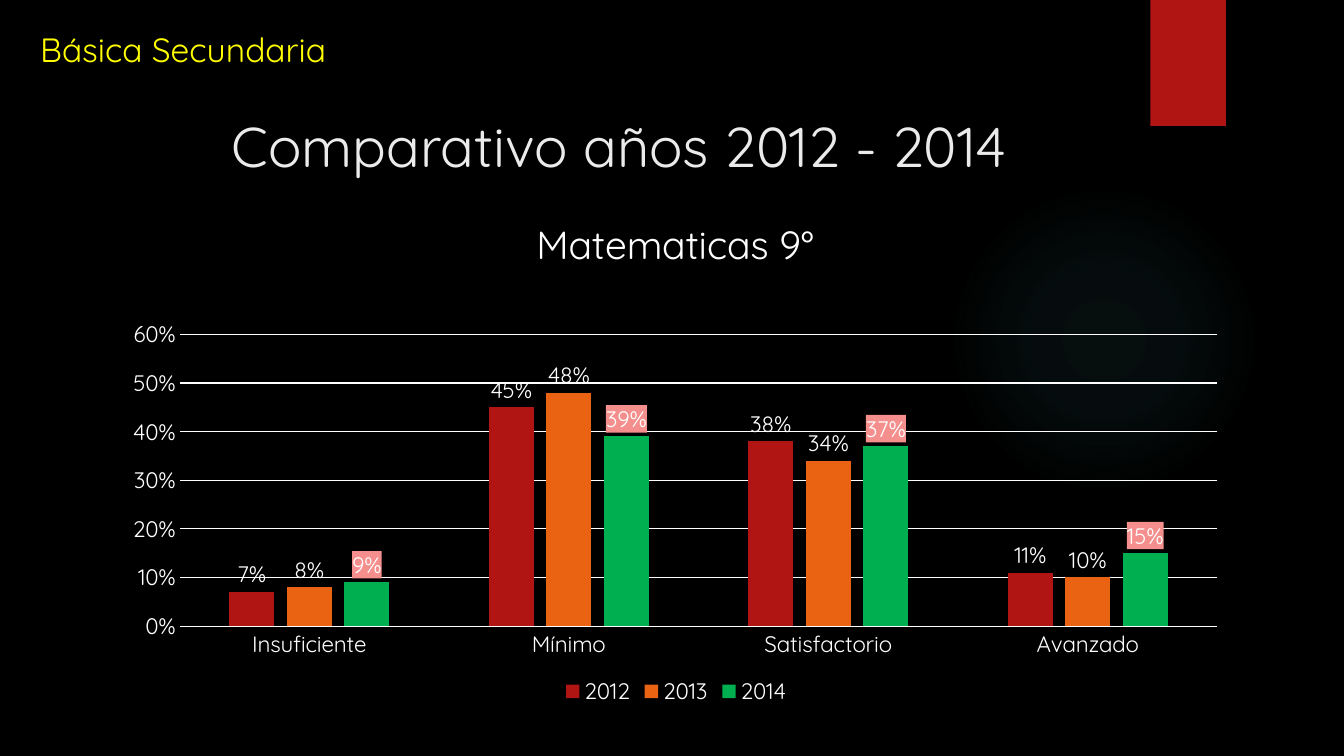
"""Build the slide comparing ninth-grade mathematics results from 2012 to 2014."""
from lxml import etree
from pptx import Presentation
from pptx.chart.data import CategoryChartData
from pptx.dml.color import RGBColor
from pptx.enum.chart import (XL_CHART_TYPE, XL_LABEL_POSITION,
                             XL_LEGEND_POSITION, XL_TICK_MARK)
from pptx.enum.shapes import MSO_SHAPE
from pptx.enum.text import MSO_ANCHOR
from pptx.oxml import parse_xml
from pptx.oxml.ns import nsdecls, qn
from pptx.util import Inches, Pt

COLUMNS = XL_CHART_TYPE.COLUMN_CLUSTERED
OUTSIDE = XL_LABEL_POSITION.OUTSIDE_END
BOTTOM = XL_LEGEND_POSITION.BOTTOM
NO_TICK = XL_TICK_MARK.NONE
MIDDLE = MSO_ANCHOR.MIDDLE

HEADINGS = [
    ("Comparativo años 2012 - 2014", (2.2, 1.01, 8.61, 0.85), "title"),
    ("Básica Secundaria", (0.3, 0.24, 3.23, 0.5), "section"),
]
CHART_TITLE = "Matematicas 9°"
LEVELS = ["Insuficiente", "Mínimo", "Satisfactorio", "Avanzado"]
RESULTS = {
    "2012": (0.07, 0.45, 0.38, 0.11),
    "2013": (0.08, 0.48, 0.34, 0.1),
    "2014": (0.09, 0.39, 0.37, 0.15),
}
HIGHLIGHTED_YEAR = "2014"
CHART_BOX = (1.11, 1.87, 11.19, 5.17)
TITLE_LAYOUT = {"xMode": "edge", "yMode": "edge", "x": 0.37, "y": 0.04}
PLOT_LAYOUT = {"layoutTarget": "inner", "xMode": "edge", "yMode": "edge",
               "x": 0.06, "y": 0.28, "w": 0.92, "h": 0.56}
GLOW_BOX = (9.41, 1.83, 3.08, 3.08)
GLOW_STOPS = [(0, 7), (36, 6), (69, 0)]
RIBBON_BOX = (11.41, 0, 0.75, 1.25)

THEME = {
    "font": "Quicksand",
    "background": "000000",
    "glow": "50B9C1",
    "ribbon": "B01513",
    "grid": "FFFFFF",
    "highlight": "F58F8D",
    "years": ("B01513", "EA6312", "00B050"),
    "title": (40, "EBEBEB"),
    "section": (24, "FFFF00"),
    "chart_title": (28, "FFFFFF"),
    "chart_text": (16, "FFFFFF"),
}


def apply(target, formats):
    for name, value in formats.items():
        setattr(target, name, value)


def style_font(font, role):
    size, color = THEME[role]
    apply(font, {"name": THEME["font"], "size": Pt(size), "bold": False})
    font.color.rgb = RGBColor.from_string(color)


def paint(fill, color):
    fill.solid()
    fill.fore_color.rgb = RGBColor.from_string(color)


def add_heading(slide, wording, box, role):
    heading = slide.shapes.add_textbox(*map(Inches, box))
    apply(heading.text_frame, {"word_wrap": True, "vertical_anchor": MIDDLE})
    paragraph = heading.text_frame.paragraphs[0]
    paragraph.text = wording
    style_font(paragraph.runs[0].font, role)


def add_decoration(slide, preset, box):
    decoration = slide.shapes.add_shape(preset, *map(Inches, box))
    decoration.shadow.inherit = False
    decoration.line.fill.background()
    paint(decoration.fill, THEME["ribbon"])
    return decoration


def add_glow(slide):
    glow = add_decoration(slide, MSO_SHAPE.OVAL, GLOW_BOX)
    stops = "".join(
        f'<a:gs pos="{place * 1000}"><a:srgbClr val="{THEME["glow"]}">'
        f'<a:alpha val="{alpha * 1000}"/></a:srgbClr></a:gs>'
        for place, alpha in GLOW_STOPS)
    gradient = parse_xml(
        f'<a:gradFill {nsdecls("a")}><a:gsLst>{stops}</a:gsLst><a:path path="circle">'
        '<a:fillToRect l="50000" t="50000" r="50000" b="50000"/></a:path></a:gradFill>')
    solid = glow.fill._xPr.find(qn("a:solidFill"))
    solid.getparent().replace(solid, gradient)


def place_manually(parent, position, settings):
    for old in parent.findall(qn("c:layout")):
        parent.remove(old)
    layout = etree.Element(qn("c:layout"))
    manual = etree.SubElement(layout, qn("c:manualLayout"))
    for name, value in settings.items():
        etree.SubElement(manual, qn(f"c:{name}")).set("val", str(value))
    parent.insert(position, layout)


def style_axes(chart):
    for axis in (chart.category_axis, chart.value_axis):
        apply(axis, {"major_tick_mark": NO_TICK, "minor_tick_mark": NO_TICK})
        style_font(axis.tick_labels.font, "chart_text")
    values = chart.value_axis
    apply(values, {"minimum_scale": 0, "maximum_scale": 0.6, "major_unit": 0.1,
                   "has_major_gridlines": True})
    apply(values.tick_labels, {"number_format": "0%", "number_format_is_linked": False})
    values.format.line.fill.background()
    for line in (values.major_gridlines.format.line, chart.category_axis.format.line):
        paint(line.fill, THEME["grid"])
        line.width = Pt(0.75)


def style_series(series, color):
    paint(series.format.fill, color)
    series.invert_if_negative = False
    labels = series.data_labels
    apply(labels, {"show_value": True, "number_format": "0%",
                   "number_format_is_linked": False, "position": OUTSIDE})
    style_font(labels.font, "chart_text")
    if series.name == HIGHLIGHTED_YEAR:
        labels._element.find(qn("c:numFmt")).addnext(parse_xml(
            f'<c:spPr {nsdecls("c", "a")}><a:solidFill>'
            f'<a:srgbClr val="{THEME["highlight"]}"/></a:solidFill></c:spPr>'))


def add_results_chart(slide):
    results = CategoryChartData(number_format="0%")
    results.categories = LEVELS
    for year, shares in RESULTS.items():
        results.add_series(year, shares)
    chart = slide.shapes.add_chart(COLUMNS, *map(Inches, CHART_BOX), results).chart
    style_font(chart.font, "chart_text")
    apply(chart, {"has_title": True, "has_legend": True})
    heading = chart.chart_title.text_frame.paragraphs[0]
    heading.text = CHART_TITLE
    style_font(heading.runs[0].font, "chart_title")
    apply(chart.legend, {"position": BOTTOM, "include_in_layout": False})
    style_font(chart.legend.font, "chart_text")
    plot = chart.plots[0]
    apply(plot, {"gap_width": 219, "overlap": -27, "vary_by_categories": False})
    for series, color in zip(plot.series, THEME["years"]):
        style_series(series, color)
    style_axes(chart)
    place_manually(chart.chart_title._element, 1, TITLE_LAYOUT)
    place_manually(chart._chartSpace.chart.plotArea, 0, PLOT_LAYOUT)


def main():
    deck = Presentation()
    apply(deck, {"slide_width": Inches(13.33), "slide_height": Inches(7.5)})
    slide = deck.slides.add_slide(deck.slide_layouts[6])
    paint(slide.background.fill, THEME["background"])
    add_glow(slide)
    add_decoration(slide, MSO_SHAPE.RECTANGLE, RIBBON_BOX)
    add_results_chart(slide)
    for wording, box, role in HEADINGS:
        add_heading(slide, wording, box, role)
    deck.save("out.pptx")


if __name__ == "__main__":
    main()
